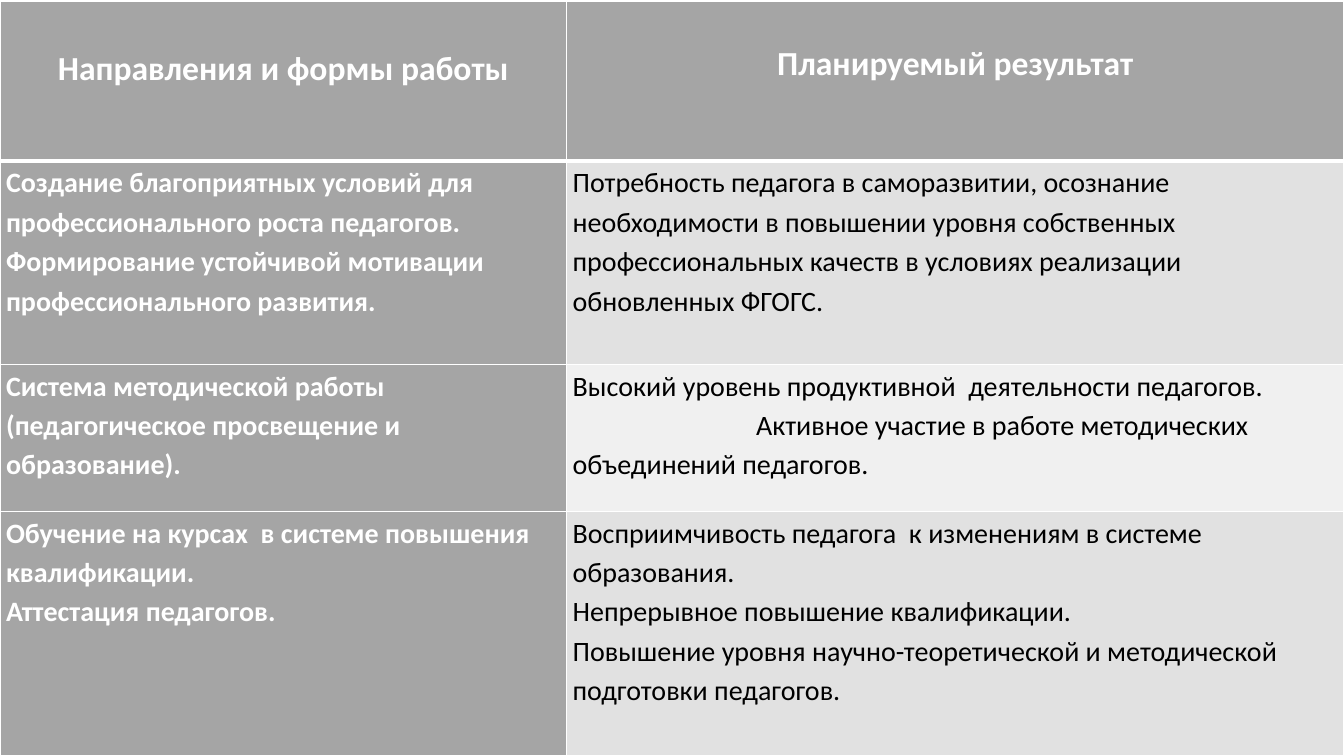
"""Builds a slide with a table of teacher development activities and results."""
from lxml import etree
from pptx import Presentation
from pptx import util as u
from pptx.dml.color import RGBColor
from pptx.enum import text
from pptx.oxml import ns

WHITE = RGBColor(0xFF, 0xFF, 0xFF)
BLACK = RGBColor(0x00, 0x00, 0x00)
GREY = RGBColor(0xA5, 0xA5, 0xA5)
BANDS = (RGBColor(0xE1, 0xE1, 0xE1), RGBColor(0xF0, 0xF0, 0xF0))

COLUMN_WIDTHS = (5.62, 7.71)
ROW_HEIGHTS = (1.59, 2.02, 1.46, 2.43)
HEADER_TOPS = (0.41, 0.36)
PARTICIPATION_INDENT = 1.82

HEADERS = ("Направления и формы работы", "Планируемый результат")
PARTICIPATION = "Активное участие в работе методических объединений педагогов."
DIRECTIONS = (
    (("Создание благоприятных условий для профессионального роста педагогов.",
      "Формирование устойчивой мотивации профессионального развития."),
     ("Потребность педагога в саморазвитии, осознание необходимости в повышении "
      "уровня собственных профессиональных качеств в условиях реализации "
      "обновленных ФГОГС.",)),
    (("Система методической работы (педагогическое просвещение и образование).",),
     ("Высокий уровень продуктивной  деятельности педагогов.", PARTICIPATION)),
    (("Обучение на курсах  в системе повышения квалификации.",
      "Аттестация педагогов."),
     ("Восприимчивость педагога  к изменениям в системе образования.",
      "Непрерывное повышение квалификации.",
      "Повышение уровня научно-теоретической и методической подготовки педагогов.")),
)

HEADER_FONT = {"name": "Calibri", "size": u.Pt(24), "bold": True}
DIRECTION_FONT = {"name": "Calibri", "size": u.Pt(20), "bold": True}
RESULT_FONT = {"name": "Calibri", "size": u.Pt(20), "bold": False}


def set_borders(cell, widths):
    """Draw white cell borders with the given widths in points."""
    properties = cell._tc.get_or_add_tcPr()
    for position, (side, width) in enumerate(widths.items()):
        line = etree.Element(ns.qn(f"a:ln{side}"), w=str(u.Pt(width)))
        fill = etree.SubElement(line, ns.qn("a:solidFill"))
        etree.SubElement(fill, ns.qn("a:srgbClr"), val=str(WHITE))
        properties.insert(position, line)


def fill_cell(cell, lines, font, color, background, alignment, top=0):
    """Write the lines into a cell and set its colours and margins."""
    margins = {"margin_left": u.Inches(0.06), "margin_right": u.Inches(0.06),
               "margin_top": u.Inches(top), "margin_bottom": 0}
    for name, value in margins.items():
        setattr(cell, name, value)
    cell.fill.solid()
    cell.fill.fore_color.rgb = background
    frame = cell.text_frame
    for number, line in enumerate(lines):
        paragraph = frame.add_paragraph() if number else frame.paragraphs[0]
        paragraph.alignment = alignment
        paragraph.line_spacing = 1.15
        run = paragraph.add_run()
        run.text = line
        for name, value in font.items():
            setattr(run.font, name, value)
        run.font.color.rgb = color
        if line == PARTICIPATION:
            paragraph._p.get_or_add_pPr().set(
                "indent", str(u.Inches(PARTICIPATION_INDENT)))


def fill_header(table):
    """Fill the header row."""
    for column, (title, top) in enumerate(zip(HEADERS, HEADER_TOPS)):
        cell = table.cell(0, column)
        fill_cell(cell, (title,), HEADER_FONT, WHITE, GREY,
                  text.PP_ALIGN.CENTER, top)
        set_borders(cell, {"L": 1, "R": 1, "T": 1, "B": 3})


def fill_directions(table):
    """Fill the rows of directions and their planned results."""
    for row, (directions, results) in enumerate(DIRECTIONS, start=1):
        band = BANDS[(row - 1) % len(BANDS)]
        styles = ((directions, DIRECTION_FONT, WHITE, GREY),
                  (results, RESULT_FONT, BLACK, band))
        for column, style in enumerate(styles):
            cell = table.cell(row, column)
            fill_cell(cell, *style, text.PP_ALIGN.LEFT)
            set_borders(cell, {"L": 1, "R": 1, "T": 3 if row == 1 else 1, "B": 1})


def add_plan(slide, left, top, width, height):
    """Place the plan table in the given box."""
    table = slide.shapes.add_table(
        len(ROW_HEIGHTS), len(COLUMN_WIDTHS), u.Inches(left), u.Inches(top),
        u.Inches(width), u.Inches(height)).table
    for column, share in zip(table.columns, COLUMN_WIDTHS):
        column.width = u.Inches(width * share / sum(COLUMN_WIDTHS))
    for row, share in zip(table.rows, ROW_HEIGHTS):
        row.height = u.Inches(height * share / sum(ROW_HEIGHTS))
    fill_header(table)
    fill_directions(table)


def main():
    """Build and save the presentation."""
    deck = Presentation()
    deck.slide_width = u.Inches(13.33)
    deck.slide_height = u.Inches(7.5)
    slide = deck.slides.add_slide(deck.slide_layouts[6])
    add_plan(slide, 0, 0.01, 13.33, 7.49)
    deck.save("out.pptx")


if __name__ == "__main__":
    main()
